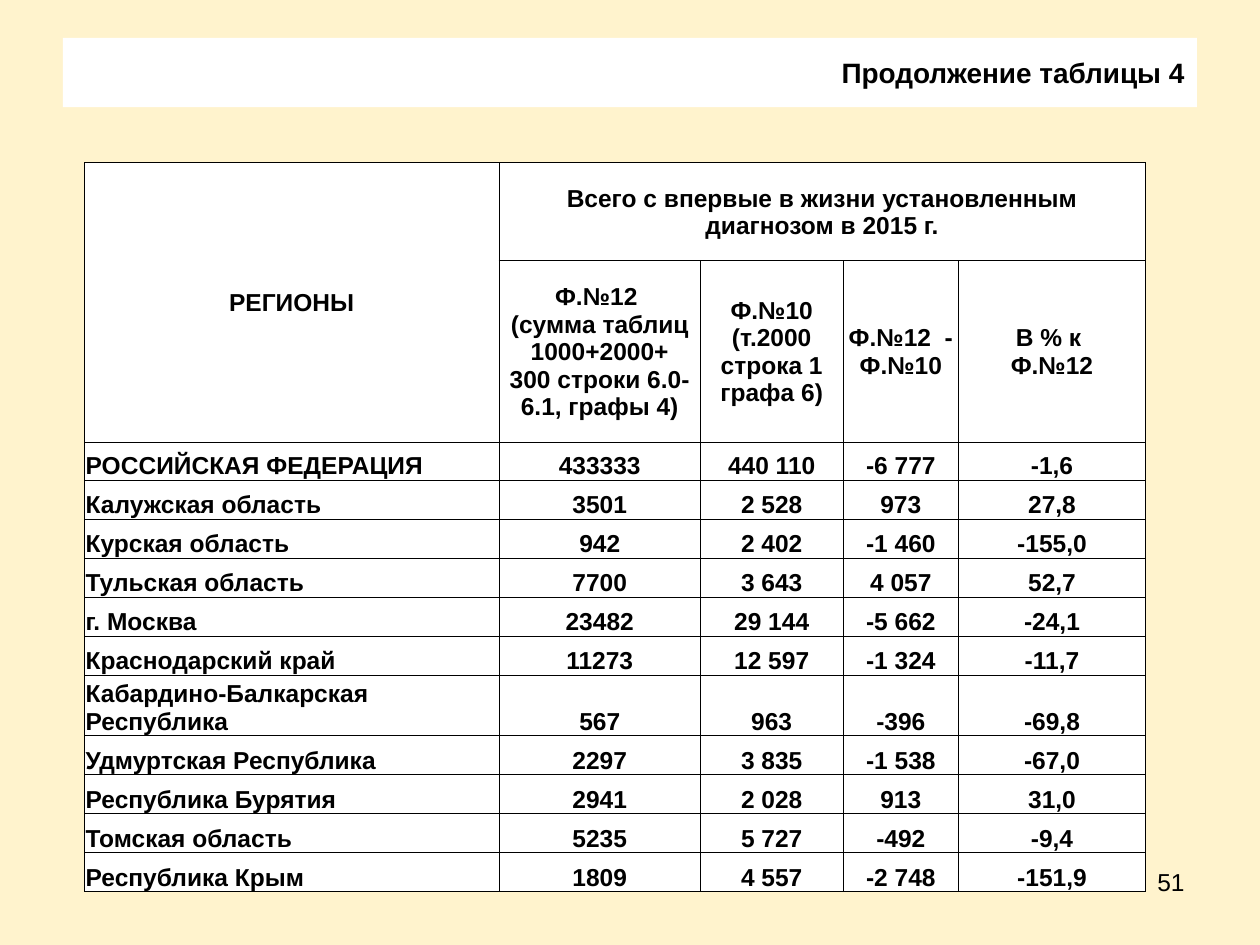
from lxml.etree import SubElement
from pptx import Presentation
from pptx.dml.color import RGBColor
from pptx.enum.text import MSO_ANCHOR as Anchor, PP_ALIGN as Align
from pptx.oxml.ns import qn
from pptx.util import Inches, Pt

COLORS = {"background": "FFF3CD", "panel": "FFFFFF", "ink": "000000"}
FONT = "Arial"
TITLE = "Продолжение таблицы 4"
PAGE_NUMBER = "51"
HEADERS = [
    ["РЕГИОНЫ", "Всего с впервые в жизни установленным диагнозом в 2015 г.", "", "", ""],
    ["", "Ф.№12 \n(сумма таблиц 1000+2000+\n300 строки 6.0-6.1, графы 4)",
     "Ф.№10\n(т.2000 строка 1 графа 6)", "Ф.№12  -\nФ.№10", "В % к \nФ.№12"],
]
REGIONS = [
    ["РОССИЙСКАЯ ФЕДЕРАЦИЯ", "433333", "440 110", "-6 777", "-1,6"],
    ["Калужская область", "3501", "2 528", "973", "27,8"],
    ["Курская область", "942", "2 402", "-1 460", "-155,0"],
    ["Тульская область", "7700", "3 643", "4 057", "52,7"],
    ["г. Москва", "23482", "29 144", "-5 662", "-24,1"],
    ["Краснодарский край", "11273", "12 597", "-1 324", "-11,7"],
    ["Кабардино-Балкарская Республика", "567", "963", "-396", "-69,8"],
    ["Удмуртская Республика", "2297", "3 835", "-1 538", "-67,0"],
    ["Республика Бурятия", "2941", "2 028", "913", "31,0"],
    ["Томская область", "5235", "5 727", "-492", "-9,4"],
    ["Республика Крым", "1809", "4 557", "-2 748", "-151,9"],
]
COLUMN_WIDTHS = [3.29, 1.6, 1.13, 0.92, 1.48]
ROW_HEIGHTS = [0.78, 1.44, 0.3] + [0.31] * (len(REGIONS) - 1)


def paint(fill, color):
    fill.solid()
    fill.fore_color.rgb = RGBColor.from_string(COLORS[color])


def write(frame, text, size, align, bold=True):
    frame.word_wrap = True
    frame.text = text
    for para in frame.paragraphs:
        para.alignment = align
        for span in para.runs:
            span.font.name = FONT
            span.font.size = Pt(size)
            span.font.bold = bold
            span.font.color.rgb = RGBColor.from_string(COLORS["ink"])


def add_text(slide, text, place, size, bold, anchor):
    box = slide.shapes.add_textbox(*map(Inches, place))
    box.text_frame.vertical_anchor = anchor
    write(box.text_frame, text, size, Align.RIGHT, bold)
    return box


def add_borders(cell):
    properties = cell._tc.get_or_add_tcPr()
    for side in ("lnL", "lnR", "lnT", "lnB"):
        line = SubElement(properties, qn(f"a:{side}"), w=str(Pt(0.5)))
        SubElement(SubElement(line, qn("a:solidFill")), qn("a:srgbClr"), val=COLORS["ink"])


def add_region_table(slide):
    rows = HEADERS + REGIONS
    table = slide.shapes.add_table(
        len(rows), len(COLUMN_WIDTHS), Inches(0.67), Inches(1.29),
        Inches(sum(COLUMN_WIDTHS)), Inches(sum(ROW_HEIGHTS))).table
    table.first_row = table.horz_banding = False
    for column, width in zip(table.columns, COLUMN_WIDTHS):
        column.width = Inches(width)
    for row, height in zip(table.rows, ROW_HEIGHTS):
        row.height = Inches(height)
    for r, texts in enumerate(rows):
        is_header = r < len(HEADERS)
        for c, text in enumerate(texts):
            cell = table.cell(r, c)
            add_borders(cell)
            paint(cell.fill, "panel")
            cell.margin_left = cell.margin_right = cell.margin_top = Inches(0.01)
            cell.margin_bottom = 0
            cell.vertical_anchor = Anchor.MIDDLE if is_header else Anchor.BOTTOM
            align = Align.CENTER if is_header or c else Align.LEFT
            write(cell.text_frame, text, 14, align)
    table.cell(0, 0).merge(table.cell(1, 0))
    table.cell(0, 1).merge(table.cell(0, 4))


def main():
    deck = Presentation()
    deck.slide_width, deck.slide_height = Inches(10), Inches(7.5)
    slide = deck.slides.add_slide(deck.slide_layouts[6])
    paint(slide.background.fill, "background")
    title = add_text(slide, TITLE, (0.5, 0.3, 9, 0.55), 16, True, Anchor.MIDDLE)
    paint(title.fill, "panel")
    add_region_table(slide)
    add_text(slide, PAGE_NUMBER, (7.17, 6.83, 2.33, 0.52), 14, False, Anchor.TOP)
    deck.save("out.pptx")


if __name__ == "__main__":
    main()
